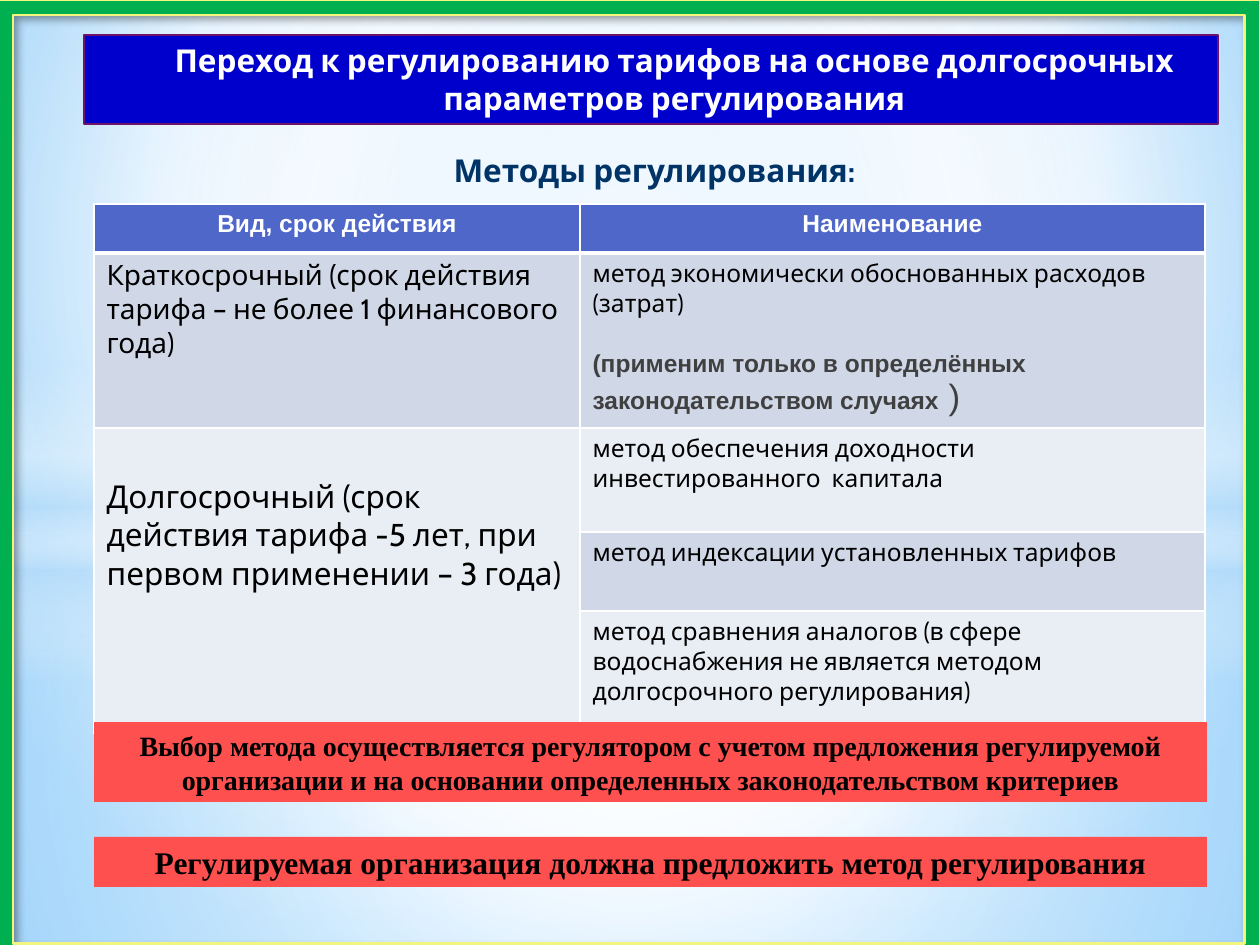
from dataclasses import dataclass

from pptx import Presentation
from pptx.dml.color import RGBColor
from pptx.enum.shapes import MSO_SHAPE
from pptx.enum.text import MSO_ANCHOR, MSO_AUTO_SIZE, PP_ALIGN
from pptx.oxml import parse_xml
from pptx.oxml.ns import nsdecls, qn
from pptx.util import Pt

RECT, OVAL, FRAME = MSO_SHAPE.RECTANGLE, MSO_SHAPE.OVAL, MSO_SHAPE.FRAME
LEFT, CENTER = PP_ALIGN.LEFT, PP_ALIGN.CENTER
TOP, MIDDLE = MSO_ANCHOR.TOP, MSO_ANCHOR.MIDDLE
FIXED, GROW = MSO_AUTO_SIZE.NONE, MSO_AUTO_SIZE.SHAPE_TO_FIT_TEXT

SCALE = 914400 / 126
TITLE_ONLY = 5
INDENT = 47

C = {
    "white": "FFFFFF", "black": "000000", "gray": "404040", "navy": "003366",
    "blue": "0000CC", "purple": "6E126A", "header": "4E67C8",
    "band": "D0D8E8", "pale": "E9EDF4", "red": "FF5050",
    "green": "00B050", "yellow": "F3F67C",
    "sky": "9ED5FF", "azure": "5BB9FF", "haze": "B4DCFA",
}


@dataclass(frozen=True)
class Style:
    size: int
    font: str = "Cabin"
    color: str = "black"
    bold: bool = False


@dataclass(frozen=True)
class Para:
    runs: tuple
    align: int = LEFT
    after: int = 0
    indent: int = 0


@dataclass(frozen=True)
class Cell:
    row: int
    col: int
    paras: tuple
    top: int = 6


@dataclass(frozen=True)
class Backdrop:
    kind: int
    box: tuple
    stops: tuple
    linear: bool = False


@dataclass(frozen=True)
class Banner:
    box: tuple
    text: str
    size: int


def px(n: int) -> int:
    return round(n * SCALE)


def rgb(name: str) -> RGBColor:
    return RGBColor.from_string(C[name])


def place(s, box: tuple) -> None:
    s.left, s.top, s.width, s.height = (px(n) for n in box)


def gradient(stops: tuple, to: tuple = (50, 50, 50, 50), linear: bool = False):
    gs = "".join(
        f'<a:gs pos="{pos * 1000}"><a:srgbClr val="{C[color]}">'
        f'<a:alpha val="{alpha * 1000}"/></a:srgbClr></a:gs>'
        for pos, color, alpha in stops)
    l, t, r, b = (n * 1000 for n in to)
    shade = '<a:lin ang="5400000" scaled="0"/>' if linear else (
        f'<a:path path="circle"><a:fillToRect l="{l}" t="{t}" r="{r}" b="{b}"/></a:path>')
    return parse_xml(f'<a:gradFill {nsdecls("a")} rotWithShape="1">'
                     f'<a:gsLst>{gs}</a:gsLst>{shade}</a:gradFill>')


def set_font(font, style: Style) -> None:
    font.size, font.name, font.bold = Pt(style.size), style.font, style.bold
    font.color.rgb = rgb(style.color)


def write(tf, paras: tuple) -> None:
    for i, para in enumerate(paras):
        p = tf.add_paragraph() if i else tf.paragraphs[0]
        p.alignment, p.space_after = para.align, Pt(para.after)
        if para.indent:
            pPr = p._p.get_or_add_pPr()
            pPr.set("marL", str(px(para.indent)))
            pPr.set("indent", "0")
        same = len({style for _, style in para.runs}) == 1
        if same:
            set_font(p.font, para.runs[0][1])
        for text, style in para.runs:
            r = p.add_run()
            r.text = text
            if not same:
                set_font(r.font, style)


def add_backdrop(slide, item: Backdrop) -> None:
    s = slide.shapes.add_shape(item.kind, *(px(n) for n in item.box))
    s._element.spPr.append(gradient(item.stops, linear=item.linear))
    s.line.fill.background()
    s.shadow.inherit = False


def add_banner(slide, item: Banner) -> None:
    s = slide.shapes.add_shape(RECT, *(px(n) for n in item.box))
    s.fill.solid()
    s.fill.fore_color.rgb = rgb("red")
    s.line.fill.background()
    s.shadow.inherit = False
    tf = s.text_frame
    tf.word_wrap, tf.vertical_anchor, tf.auto_size = True, MIDDLE, GROW
    style = Style(item.size, "Times New Roman", bold=True)
    write(tf, (Para(((item.text, style),), CENTER),))


def add_frame(slide, box: tuple) -> None:
    s = slide.shapes.add_shape(FRAME, *(px(n) for n in box))
    s.adjustments[0] = 0.016
    s.fill.solid()
    s.fill.fore_color.rgb = rgb("green")
    s.line.color.rgb = rgb("yellow")
    s.line.width = Pt(1.25)
    s._element.spPr.append(parse_xml(
        f'<a:effectLst {nsdecls("a")}><a:outerShdw blurRad="{Pt(4)}" dist="{Pt(3)}" '
        f'dir="2700000"><a:srgbClr val="{C["black"]}"><a:alpha val="40000"/></a:srgbClr>'
        '</a:outerShdw></a:effectLst>'))


def add_methods(slide, box: tuple, cols: tuple, rows: tuple,
                fills: tuple, cells: tuple) -> None:
    table = slide.shapes.add_table(len(rows), len(cols), *(px(n) for n in box)).table
    for col, width in zip(table.columns, cols):
        col.width = px(width)
    for row, height in zip(table.rows, rows):
        row.height = px(height)
    for i, pair in enumerate(fills):
        for j, color in enumerate(pair):
            cell = table.cell(i, j)
            tcPr = cell._tc.get_or_add_tcPr()
            for side in "LRTB":
                heavy = (i, side) in ((0, "B"), (1, "T"))
                tcPr.append(parse_xml(
                    f'<a:ln{side} {nsdecls("a")} w="{Pt(3 if heavy else 1)}"><a:solidFill>'
                    f'<a:srgbClr val="{C["white"]}"/></a:solidFill></a:ln{side}>'))
            cell.fill.solid()
            cell.fill.fore_color.rgb = rgb(color)
    table.cell(2, 0).merge(table.cell(4, 0))
    for item in cells:
        cell = table.cell(item.row, item.col)
        cell.margin_top = px(item.top)
        write(cell.text_frame, item.paras)


HEAD = Style(14, "Arial", "white", True)
BODY = Style(14)
NOTE = Style(14, "Arial", "gray", True)

BACKDROPS = (
    Backdrop(RECT, (0, 533, 1260, 412),
             ((0, "white", 92), (37, "white", 77), (100, "haze", 80))),
    Backdrop(RECT, (0, 0, 1260, 533),
             ((0, "white", 90), (48, "white", 63), (100, "haze", 80))),
    Backdrop(RECT, (0, 365, 1260, 315),
             ((0, "white", 0), (29, "white", 30), (45, "haze", 40),
              (55, "white", 26), (65, "haze", 60), (100, "white", 0)), True),
    Backdrop(OVAL, (0, 220, 1260, 703), ((0, "white", 100), (54, "white", 0))),
)
CELLS = (
    Cell(0, 0, (Para((("Вид, срок действия", HEAD),), CENTER, 3),)),
    Cell(0, 1, (Para((("Наименование", HEAD),), CENTER, 3),)),
    Cell(1, 0, (Para((("Краткосрочный (срок действия тарифа – не более 1 финансового года)",
                       Style(16)),), after=3),)),
    Cell(1, 1, (Para((("метод экономически обоснованных расходов (затрат)", BODY),), after=18),
                Para((("(применим только в определённых законодательством случаях", NOTE),
                      (" )", Style(20, "Arial", "gray"))), after=18))),
    Cell(2, 0, (Para((("Долгосрочный (срок действия тарифа -5 лет, при первом применении – 3 года)",
                       Style(18)),), after=3),), 50),
    Cell(2, 1, (Para((("метод обеспечения доходности инвестированного  капитала", BODY),),
                     after=12),)),
    Cell(3, 1, (Para((("метод индексации установленных тарифов", BODY),), after=12),)),
    Cell(4, 1, (Para((("метод сравнения аналогов (в сфере водоснабжения не является "
                       "методом долгосрочного регулирования)", BODY),), after=12),)),
)
FILLS = (("header",) * 2, ("band",) * 2, ("pale",) * 2, ("pale", "band"), ("pale",) * 2)
BANNERS = (
    Banner((94, 722, 1113, 80), "Выбор метода осуществляется регулятором с учетом предложения "
           "регулируемой организации и на основании определенных законодательством критериев", 16),
    Banner((94, 837, 1113, 50),
           "Регулируемая организация должна предложить метод регулирования", 18),
)


def main() -> None:
    prs = Presentation()
    prs.slide_width, prs.slide_height = px(1260), px(945)
    slide = prs.slides.add_slide(prs.slide_layouts[TITLE_ONLY])
    slide.background.fill.solid()
    bgPr = slide._element.find(".//" + qn("p:bgPr"))
    bgPr.replace(bgPr[0], gradient(
        ((0, "sky", 100), (60, "white", 100), (100, "azure", 100)), (20, 10, 20, 60)))
    for item in BACKDROPS:
        add_backdrop(slide, item)

    sub = slide.shapes.add_textbox(*(px(n) for n in (64, 145, 1134, 89)))
    sub.text_frame.word_wrap = True
    write(sub.text_frame, (Para((("Методы регулирования:", Style(18, color="navy", bold=True)),),
                                CENTER, indent=INDENT),))

    title = slide.shapes.title
    slide.shapes._spTree.append(title._element)
    place(title, (84, 35, 1134, 89))
    title.fill.solid()
    title.fill.fore_color.rgb = rgb("blue")
    title.line.color.rgb = rgb("purple")
    title.line.width = Pt(0.75)
    tf = title.text_frame
    tf.word_wrap, tf.vertical_anchor, tf.auto_size = True, TOP, FIXED
    write(tf, (Para((("Переход к регулированию тарифов на основе долгосрочных "
                      "параметров регулирования", Style(18, color="white", bold=True)),),
                    CENTER, indent=INDENT),))

    add_methods(slide, (94, 204, 1111, 529), (486, 625), (49, 175, 104, 79, 122), FILLS, CELLS)
    add_frame(slide, (-2, 0, 1262, 959))
    for item in BANNERS:
        add_banner(slide, item)
    prs.save("out.pptx")


if __name__ == "__main__":
    main()
